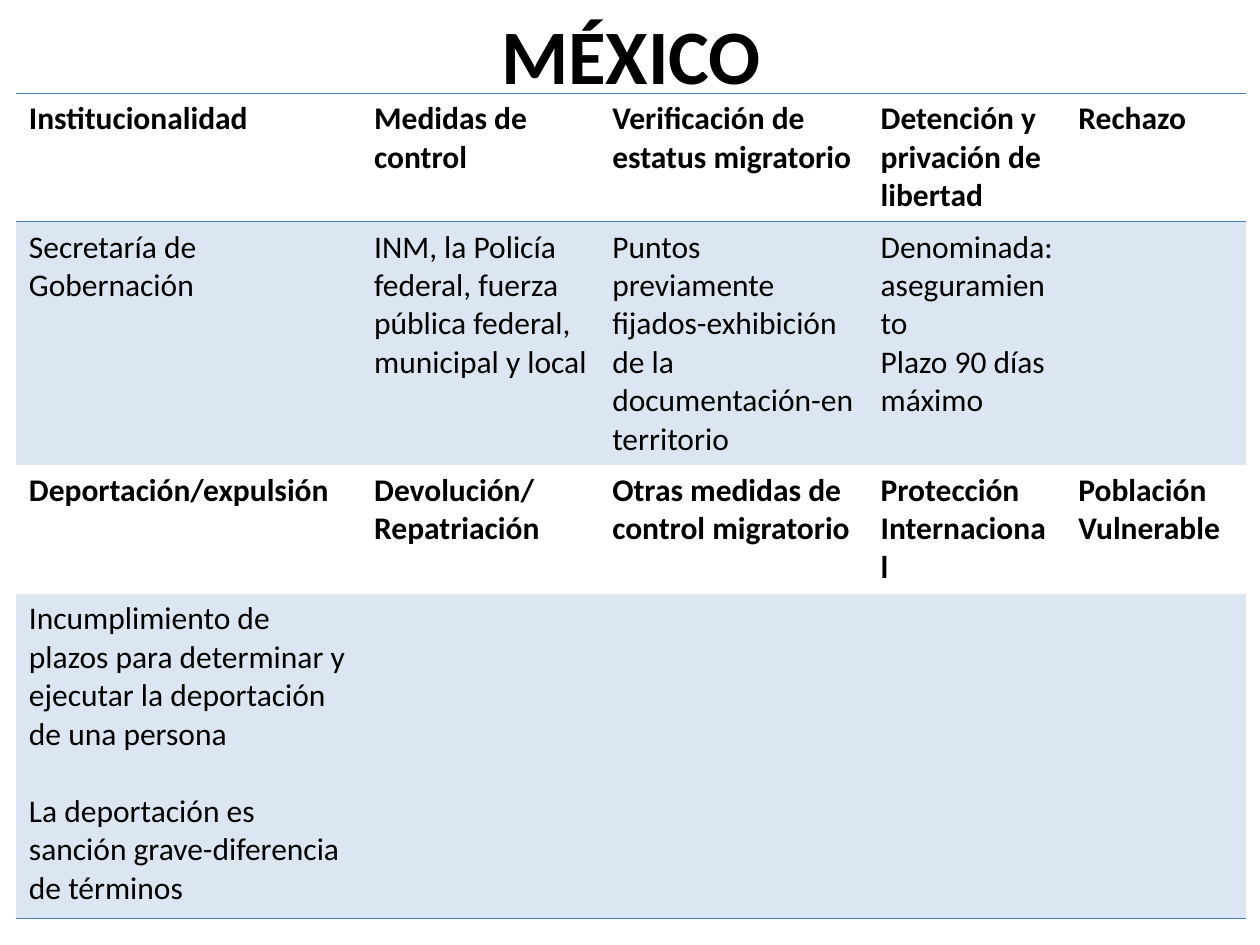
from lxml import etree
from pptx import Presentation
from pptx.dml.color import RGBColor
from pptx.enum.text import MSO_ANCHOR, PP_ALIGN
from pptx.oxml.ns import qn
from pptx.util import Inches, Pt

CENTER, LEFT = PP_ALIGN.CENTER, PP_ALIGN.LEFT
MIDDLE = MSO_ANCHOR.MIDDLE
COLORS = {"text": "000000", "rule": "4F81BD", "band": "DCE6F2", "plain": "FFFFFF"}
PLAIN_TABLE = "{2D5ABB26-0587-4C30-8999-92F81FD0307C}"


def write(frame, text, size=18, bold=False, align=LEFT, gap=0):
    frame.text = text
    for index, paragraph in enumerate(frame.paragraphs):
        paragraph.alignment = align
        paragraph.space_before = Pt(gap if index else 0)
        font = paragraph.font
        for run in paragraph.runs:
            font = run.font
            font.name, font.size, font.bold = "Calibri", Pt(size), bold
            font.color.rgb = RGBColor.from_string(COLORS["text"])


def rule(cell, edges):
    properties = cell._tc.get_or_add_tcPr()
    for position, edge in enumerate(edges):
        line = etree.Element(qn(f"a:{edge}"), w=str(Pt(1)))
        fill = etree.SubElement(line, qn("a:solidFill"))
        etree.SubElement(fill, qn("a:srgbClr"), val=COLORS["rule"])
        properties.insert(position, line)


prs = Presentation()
prs.slide_width, prs.slide_height = Inches(10), Inches(7.5)
slide = prs.slides.add_slide(prs.slide_layouts[5])

country = slide.shapes.title
country.left, country.top = Inches(2.61), Inches(-0.05)
country.width, country.height = Inches(4.8), Inches(0.96)
country.text_frame.vertical_anchor = MIDDLE
write(country.text_frame, "MÉXICO", size=44, bold=True, align=CENTER)

column_widths = [2.74, 1.89, 2.13, 1.57, 1.43]
row_heights = [1.02, 1.93, 1.02, 2.58]
policies = [
    ["Institucionalidad", "Medidas de control", "Verificación de estatus migratorio",
     "Detención y privación de libertad", "Rechazo"],
    ["Secretaría de Gobernación",
     "INM, la Policía federal, fuerza pública federal, municipal y local",
     "Puntos previamente fijados-exhibición de la documentación-en territorio",
     "Denominada: aseguramiento\nPlazo 90 días máximo", ""],
    ["Deportación/expulsión", "Devolución/Repatriación",
     "Otras medidas de control migratorio", "Protección Internacional",
     "Población Vulnerable"],
    ["Incumplimiento de plazos para determinar y ejecutar la deportación de una persona\n"
     "La deportación es sanción grave-diferencia de términos", "", "", "", ""],
]
row_rules = {0: ["lnT", "lnB"], 3: ["lnB"]}

table = slide.shapes.add_table(
    len(row_heights), len(column_widths), Inches(0.13), Inches(0.74),
    Inches(sum(column_widths)), Inches(sum(row_heights))).table
table.first_row = table.horz_banding = False
table._tbl.tblPr.find(qn("a:tableStyleId")).text = PLAIN_TABLE
for column, width in zip(table.columns, column_widths):
    column.width = Inches(width)

for r, (height, policy_row) in enumerate(zip(row_heights, policies)):
    table.rows[r].height = Inches(height)
    heading = r % 2 == 0
    for c, policy in enumerate(policy_row):
        cell = table.cell(r, c)
        cell.fill.solid()
        cell.fill.fore_color.rgb = RGBColor.from_string(COLORS["plain" if heading else "band"])
        rule(cell, row_rules.get(r, []))
        if policy:
            write(cell.text_frame, policy, bold=heading, gap=22 if r == 3 else 0)

slide.shapes._spTree.append(country._element)
prs.save("out.pptx")
